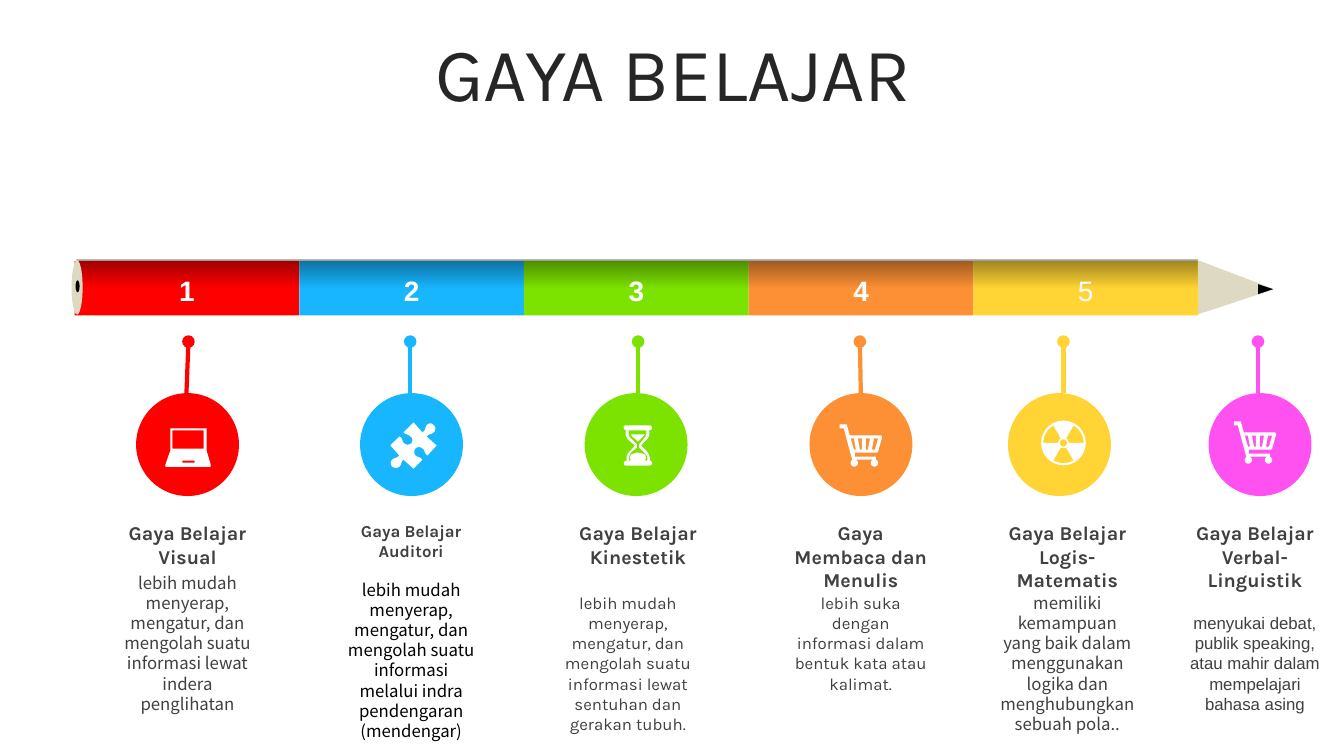
import dataclasses
import math

import pptx
import pptx.dml.color
import pptx.enum.dml
import pptx.enum.shapes
import pptx.enum.text
import pptx.oxml
import pptx.oxml.ns
import pptx.util

Pt = pptx.util.Pt
RGBColor = pptx.dml.color.RGBColor
Shapes = pptx.enum.shapes.MSO_SHAPE
qn = pptx.oxml.ns.qn

RED = RGBColor(0xFF, 0x00, 0x00)
BLUE = RGBColor(0x17, 0xB6, 0xFF)
GREEN = RGBColor(0x7C, 0xE2, 0x00)
ORANGE = RGBColor(0xFD, 0x90, 0x34)
YELLOW = RGBColor(0xFF, 0xD4, 0x34)
PINK = RGBColor(0xFF, 0x51, 0xEF)
WOOD = RGBColor(0xDD, 0xD9, 0xC3)
BLACK = RGBColor(0x00, 0x00, 0x00)
WHITE = RGBColor(0xFF, 0xFF, 0xFF)
DARK = RGBColor(0x26, 0x26, 0x26)
GREY = RGBColor(0x40, 0x40, 0x40)
KARLA, NOTO, ARIAL = "Karla", "Noto Sans CJK KR", "Arial"
DIAMETER = 73.5
CIRCLE_TOP = 280.8
TEXT_WIDTH = 110.9


def arc(cx, cy, radius, start=0, end=360):
    angles = [math.radians(start + (end - start) * i / 24) for i in range(25)]
    return [(cx + radius * math.cos(a), cy + radius * math.sin(a)) for a in angles]


def bar(left, top, right, bottom):
    return [(left, top), (right, top), (right, bottom), (left, bottom)]


LAPTOP = [
    [(24.5, 25.2), (50.4, 25.2), (50.4, 41), (53.3, 51.1), (53.3, 52.6),
     (20.9, 52.6), (20.9, 51.1), (24.5, 41)],
    bar(25.9, 26.6, 48.2, 39.6),
    bar(33.1, 48.2, 41.8, 49.7),
]
PUZZLE = [[
    (52.6, 23), (54, 23.8, 54, 25.9, 53.3, 27.4), (51.8, 29.5, 49.7, 28.8, 47.5, 31),
    (54.7, 37.4), (48.2, 44.6), (45.4, 42.5, 46.8, 41, 44.6, 39.6),
    (43.2, 38.2, 41, 38.2, 39.6, 39.6), (38.9, 40.3, 38.2, 42.5, 39.6, 44.6),
    (41.8, 46.1, 42.5, 45.4, 44.6, 47.5), (38.2, 54), (31, 47.5),
    (28.8, 49.7, 30.2, 50.4, 28.1, 52.6), (26.6, 54, 23.8, 53.3, 23, 52.6),
    (21.6, 51.1, 21.6, 49, 23, 47.5), (24.5, 46.1, 25.9, 46.8, 28.1, 44.6),
    (21.6, 37.4), (28.1, 31), (31, 32.4, 29.5, 34.6, 31.7, 36),
    (33.1, 37.4, 35.3, 36.7, 36.7, 36), (37.4, 34.6, 38.2, 32.4, 36, 31),
    (33.8, 28.8, 33.1, 30.2, 31, 28.1), (38.2, 20.9), (44.6, 28.1),
    (47.5, 25.9, 46.1, 25.2, 47.5, 23), (49.7, 20.9, 51.8, 21.6, 52.6, 23),
]]
HOURGLASS = [
    [(38.2, 42.5), (40.3, 43.2, 41.8, 43.2, 43.2, 43.9), (43.9, 45.4, 43.9, 46.8, 43.2, 48.2),
     (33.1, 48.2), (32.4, 46.8, 32.4, 45.4, 33.1, 43.9), (35.3, 43.2, 36.7, 42.5, 38.2, 42.5)],
    [(33.1, 29.5), (43.2, 29.5), (41.8, 31), (38.2, 34.6), (34, 31)],
    [(31.7, 26.6), (31, 28.8, 31.7, 31, 33.1, 32.4), (37.4, 36.7), (37.4, 38.9),
     (33.1, 42.5), (31.7, 44.6, 31.7, 46.8, 31.7, 48.2), (44.6, 48.2),
     (45.4, 46.8, 44.6, 43.9, 42.5, 42.5), (38.9, 38.9), (38.9, 36.7),
     (42.5, 32.4), (43.9, 31, 44.6, 28.1, 43.9, 26.6)],
    [(29.5, 23), (46.1, 23), (48.9, 23, 48.9, 26.6, 46.1, 26.6),
     (46.8, 28.8, 46.1, 31.7, 43.9, 33.8), (40.3, 37.4), (43.9, 41),
     (46.1, 43.2, 46.8, 46.1, 46.8, 48.3), (48.9, 48.9, 48.9, 51.8, 46.1, 51.8),
     (29.5, 51.8), (27.4, 51.8, 27.4, 48.3, 30.2, 48.2),
     (29.5, 46.1, 30.2, 43.2, 32.4, 41.5), (36, 37.4), (31.7, 33.8),
     (29.5, 31.7, 28.8, 28.8, 29.5, 26.6), (27.4, 25.9, 27.4, 23, 29.5, 23)],
]
CART = [
    [(46.1, 32.4), (44.6, 40.3), (46.8, 40.3), (49, 32.4)],
    [(40.3, 32.4), (40.3, 40.3), (41.8, 40.3), (43.2, 32.4)],
    [(34.6, 32.4), (36, 40.3), (37.4, 40.3), (37.4, 32.4)],
    [(29.5, 32.4), (31.7, 40.3), (33.1, 40.3), (31.7, 32.4)],
    [(26.6, 22.3), (28.8, 30.2), (50.4, 30.2), (51.5, 30.2, 51.8, 30.9, 51.8, 31.7),
     (49, 41.8), (48.2, 42.5), (32.4, 42.5), (32.4, 45.4), (47.5, 45.4), (47.5, 47.5),
     (30.5, 47.5), (24.5, 25.2), (21.6, 25.2), (21.6, 22.3)],
    arc(46.4, 49.9, 2.6),
    arc(32, 49.9, 2.6),
]
RADIATION = [arc(39.6, 35.6, 16), arc(39.6, 35.6, 2.6)] + [
    arc(39.6, 35.6, 14.4, start, start + 60) + arc(39.6, 35.6, 3.7, start + 60, start)
    for start in (60, 180, 300)
]


@dataclasses.dataclass
class Style:
    color: RGBColor
    circle_left: float
    pin: tuple
    icon: list
    heading: str
    heading_left: float
    heading_height: float
    detail: str
    detail_box: tuple
    detail_font: str
    heading_size: int = 14
    detail_color: RGBColor = GREY
    icon_shift: tuple = (0, 0)


STYLES = [
    Style(RED, 97.2, (134.6, 133.2), LAPTOP, "Gaya Belajar Visual", 78.5, 41,
          "lebih mudah menyerap, mengatur, dan mengolah suatu informasi lewat indera penglihatan",
          (78.5, 405.4, 108.7), NOTO),
    Style(BLUE, 257.2, (293, 293), PUZZLE, "Gaya Belajar Auditori", 238.3, 36,
          "lebih mudah menyerap, mengatur, dan mengolah suatu informasi melalui indra "
          "pendengaran (mendengar)", (238.3, 410.4, 123.8), NOTO, 12, BLACK),
    Style(GREEN, 417.6, (455.8, 455.8), HOURGLASS, "Gaya Belajar Kinestetik", 400.3, 41,
          "lebih mudah menyerap, mengatur, dan mengolah suatu informasi lewat sentuhan "
          "dan gerakan tubuh.", (393.1, 419.8, 108.7), KARLA),
    Style(ORANGE, 578.2, (614.2, 614.9), CART, "Gaya Membaca dan Menulis", 559.4, 58.3,
          "lebih suka dengan informasi dalam bentuk kata atau kalimat.",
          (559.4, 419.8, 65.5), KARLA),
    Style(YELLOW, 720, (759.6, 759.6), RADIATION, "Gaya Belajar Logis-Matematis", 707, 58.3,
          "memiliki kemampuan yang baik dalam menggunakan logika dan menghubungkan sebuah pola..",
          (707, 419.8, 108.7), NOTO),
    Style(PINK, 863.3, (898.6, 898.6), CART, "Gaya Belajar Verbal-Linguistik", 841, 58.3,
          "menyukai debat, publik speaking, atau mahir dalam mempelajari bahasa asing",
          (841, 434.2, 79.9), ARIAL, icon_shift=(-3.6, -2.1)),
]


def paint(shape, color):
    shape.shadow.inherit = False
    shape.fill.solid()
    shape.fill.fore_color.rgb = color
    shape.line.fill.background()


def add_filled(slide, preset, box, color):
    shape = slide.shapes.add_shape(preset, *map(Pt, box))
    paint(shape, color)
    return shape


def flatten(contour):
    points = [contour[0]]
    for step in contour[1:]:
        if len(step) == 2:
            points.append(step)
            continue
        controls = [points[-1], step[:2], step[2:4], step[4:]]
        for t in (i / 8 for i in range(1, 9)):
            weights = ((1 - t) ** 3, 3 * t * (1 - t) ** 2, 3 * t * t * (1 - t), t ** 3)
            points.append(tuple(sum(w * c[axis] for w, c in zip(weights, controls))
                                for axis in (0, 1)))
    return points


def add_outline(slide, contours, left, top, color):
    placed = [[(Pt(left + x), Pt(top + y)) for x, y in flatten(c)] for c in contours]
    builder = slide.shapes.build_freeform(*placed[0][0])
    for index, points in enumerate(placed):
        if index:
            builder.move_to(*points[0])
        builder.add_line_segments(points[1:], close=True)
    paint(builder.convert_to_shape(), color)


def write(frame, text, size=12, font=KARLA, color=GREY, bold=False):
    frame.word_wrap = True
    paragraph = frame.paragraphs[0]
    paragraph.alignment = pptx.enum.text.PP_ALIGN.CENTER
    run = paragraph.add_run()
    run.text = text
    run.font.size, run.font.name, run.font.bold = Pt(size), font, bold
    run.font.color.rgb = color
    return paragraph


def add_text(slide, box, text, **style):
    frame = slide.shapes.add_textbox(*map(Pt, box)).text_frame
    write(frame, text, **style)
    frame.auto_size = pptx.enum.text.MSO_AUTO_SIZE.SHAPE_TO_FIT_TEXT


def add_title(slide, box):
    title = slide.shapes.title
    title.left, title.top, title.width, title.height = map(Pt, box)
    frame = title.text_frame
    frame.auto_size = pptx.enum.text.MSO_AUTO_SIZE.NONE
    frame.vertical_anchor = pptx.enum.text.MSO_ANCHOR.MIDDLE
    paragraph = write(frame, "GAYA BELAJAR", size=54, color=DARK)
    paragraph.line_spacing = 0.9
    paragraph.space_before = Pt(10)


def add_pencil(slide, left, top, width, height):
    colors = [style.color for style in STYLES[:5]]
    segment = width / len(colors)
    tip = add_filled(slide, Shapes.ISOSCELES_TRIANGLE,
                     (left + width + 7.5, top - 7.9, height, 54.7), WOOD)
    tip.rotation = 91.2
    add_outline(slide, [[(0, 0), (10.8, 3.6), (0, 7.2)]], left + 845.3, top + 16.5, BLACK)
    for index, color in enumerate(colors):
        add_filled(slide, Shapes.RECTANGLE,
                   (left + index * segment, top, segment, height), color)
    shade = add_filled(slide, Shapes.RECTANGLE, (left + 1.4, top - 0.7, width - 2, height), BLACK)
    shade.fill.gradient()
    shade.fill.gradient_angle = 270
    for stop, position in zip(shade.fill.gradient_stops, (0, 0.52)):
        stop.color.rgb = BLACK
        stop.position = position
    for tone, alpha in zip(shade._element.iter(qn("a:srgbClr")), ("39000", "0")):
        tone.append(pptx.oxml.parse_xml(
            f'<a:alpha {pptx.oxml.ns.nsdecls("a")} val="{alpha}"/>'))
    add_filled(slide, Shapes.OVAL, (left - 2.2, top - 0.7, 7.9, height), WOOD)
    add_filled(slide, Shapes.OVAL, (left + 0.7, top + 13.7, 2.9, 8.6), BLACK)
    for index in range(len(colors)):
        add_text(slide, (left + (index + 0.5) * segment - 42.85, top + 5, 85.7, 31.7),
                 str(index + 1), size=20, font=ARIAL, color=WHITE, bold=index < 4)


def add_pin(slide, start, end, top, bottom, color):
    pin = slide.shapes.add_connector(pptx.enum.shapes.MSO_CONNECTOR.STRAIGHT,
                                     Pt(start), Pt(top), Pt(end), Pt(bottom))
    pin.line.color.rgb = color
    pin.line.width = Pt(3)
    namespace = pptx.oxml.ns.nsdecls("a")
    pin.line._get_or_add_ln().append(
        pptx.oxml.parse_xml(f'<a:headEnd {namespace} type="oval"/>'))
    pin._element.spPr.append(pptx.oxml.parse_xml(f"<a:effectLst {namespace}/>"))


def add_style(slide, style, top):
    add_filled(slide, Shapes.OVAL, (style.circle_left, top, DIAMETER, DIAMETER), style.color)
    add_pin(slide, *style.pin, top - 36.8, top, style.color)
    shift_x, shift_y = style.icon_shift
    add_outline(slide, style.icon, style.circle_left + shift_x, top + shift_y, WHITE)
    add_text(slide, (style.heading_left, top + 87.8, TEXT_WIDTH, style.heading_height),
             style.heading, size=style.heading_size, bold=True)
    left, detail_top, height = style.detail_box
    add_text(slide, (left, detail_top, TEXT_WIDTH, height), style.detail,
             font=style.detail_font, color=style.detail_color)


def main():
    deck = pptx.Presentation()
    deck.slide_width, deck.slide_height = Pt(960), Pt(540)
    slide = deck.slides.add_slide(deck.slide_layouts[5])
    add_title(slide, (25.2, 26.6, 911.5, 56.9))
    add_pencil(slide, 53.3, 186.5, 802.5, 38.9)
    for style in STYLES:
        add_style(slide, style, CIRCLE_TOP)
    deck.save("out.pptx")


if __name__ == "__main__":
    main()
